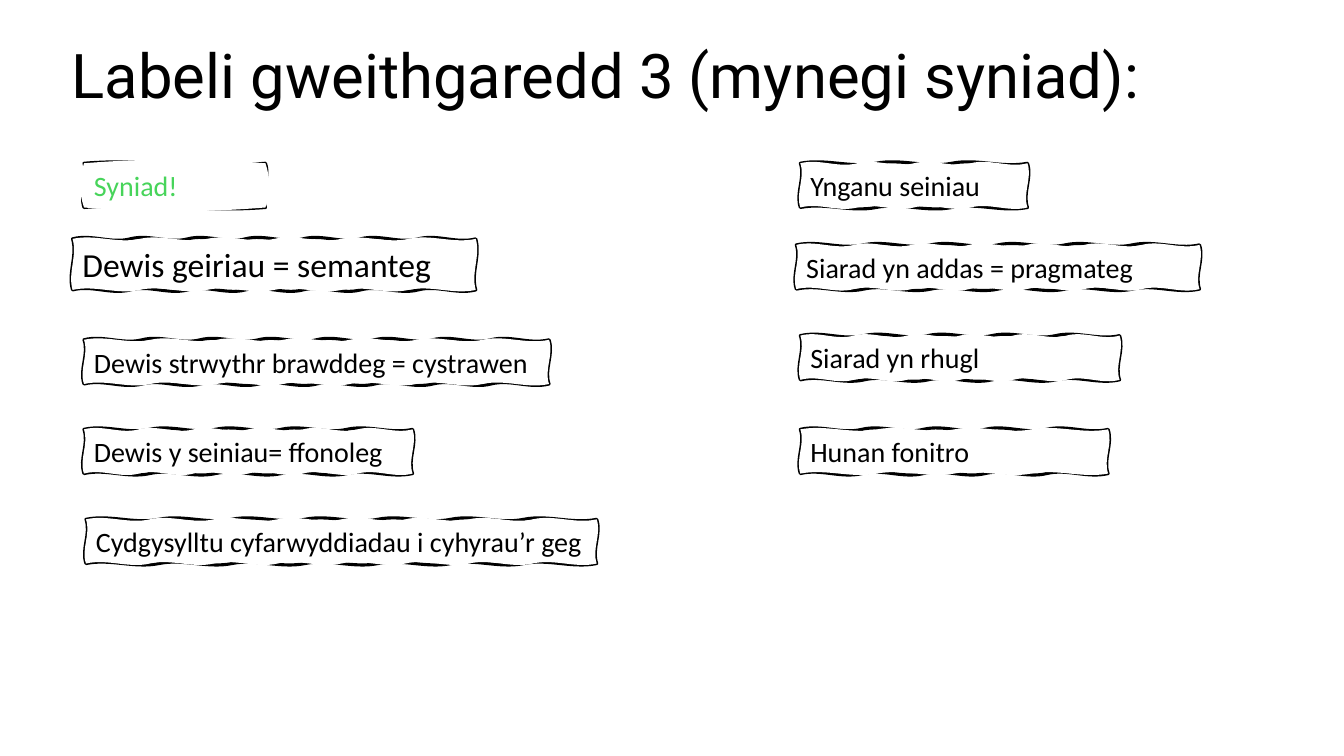
from copy import deepcopy
from dataclasses import dataclass
from math import hypot

from lxml.etree import SubElement
from pptx import Presentation
from pptx.dml.color import RGBColor as Color
from pptx.enum.text import MSO_ANCHOR as Anchor, PP_ALIGN as Align
from pptx.oxml.ns import qn
from pptx.util import Inches, Pt

SLIDE_WIDTH, SLIDE_HEIGHT = Inches(13.33), Inches(7.5)
SWAY = Inches(0.05)


@dataclass(frozen=True)
class Theme:
    ink: Color = Color(0x00, 0x00, 0x00)
    paper: Color = Color(0xFF, 0xFF, 0xFF)
    accent: Color = Color(0x47, 0xD4, 0x5A)
    title_font: str = "Roboto"
    label_font: str = "Calibri"
    title_size: int = 44
    label_size: int = 20
    large_size: int = 24
    line_width: float = 2.25


THEME = Theme()


@dataclass(frozen=True)
class Label:
    """A sketched label; lengths are percentages of the slide."""
    text: str
    left: float
    top: float
    width: float
    height: float = 5.85
    size: int = THEME.label_size
    color: Color = THEME.ink
    line_waves: int = 5
    mask_waves: int = 6
    bulging_mask: bool = False


LABELS = [
    # Left column
    Label("Syniad!", 6.25, 21.6, 13.5, color=THEME.accent,
          line_waves=1, mask_waves=1, bulging_mask=True),
    Label("Dewis geiriau = semanteg", 5.4, 31.6, 30, height=6.75,
          size=THEME.large_size, line_waves=7, mask_waves=6),
    Label("Dewis strwythr brawddeg = cystrawen", 6.25, 44.95, 34.6, line_waves=8, mask_waves=7),
    Label("Dewis y seiniau= ffonoleg", 6.25, 56.8, 24.45),
    Label("Cydgysylltu cyfarwyddiadau i cyhyrau’r geg", 6.4, 68.7, 38,
          line_waves=7, mask_waves=8),
    # Right column
    Label("Ynganu seiniau", 59.55, 21.6, 16.9, line_waves=3, mask_waves=4),
    Label("Siarad yn addas = pragmateg", 59.25, 32.4, 30, line_waves=6, mask_waves=7),
    Label("Siarad yn rhugl", 59.55, 44.4, 23.75),
    Label("Hunan fonitro", 59.55, 56.8, 22.9, line_waves=5, mask_waves=4),
]


def across(percent: float) -> int:
    return round(SLIDE_WIDTH * percent / 100)


def down(percent: float) -> int:
    return round(SLIDE_HEIGHT * percent / 100)


def write_text(shape, text: str, *, font: str, size: int, color: Color,
               line_spacing: float = 1.0) -> None:
    frame = shape.text_frame
    frame.word_wrap = True
    frame.vertical_anchor = Anchor.MIDDLE
    paragraph = frame.paragraphs[0]
    paragraph.alignment = Align.LEFT
    paragraph.line_spacing = line_spacing
    run = paragraph.add_run()
    run.text = text
    run.font.name, run.font.size = font, Pt(size)
    run.font.color.rgb = color


def outline_knots(label: Label, waves: int) -> list[tuple[int, int]]:
    """Wave ends, clockwise from the top left corner and back to it."""
    left, top = across(label.left), down(label.top)
    width, height = across(label.width), down(label.height)
    shares = [wave / waves for wave in range(waves + 1)]
    upper = [(left + round(width * share), top) for share in shares]
    lower = [(x, top + height) for x, _ in reversed(upper)]
    return upper + lower + upper[:1]


def bend_segments(contour, bulging: bool) -> None:
    """Turn straight segments into curves that sway out and then in, or only out."""
    turns = (1, 1) if bulging else (1, -1)
    start = None
    for segment in contour:
        point = segment.find(qn("a:pt"))
        if point is None:
            continue
        end = int(point.get("x")), int(point.get("y"))
        if segment.tag == qn("a:lnTo"):
            run, rise = end[0] - start[0], end[1] - start[1]
            length = hypot(run, rise)
            curve = SubElement(contour, qn("a:cubicBezTo"))
            for share, turn in zip((1 / 3, 2 / 3), turns):
                shift = SWAY * turn / length
                SubElement(curve, qn("a:pt"), x=str(round(start[0] + run * share + rise * shift)),
                           y=str(round(start[1] + rise * share - run * shift)))
            curve.append(point)
            contour.replace(segment, curve)
        start = end


def draw_label(slide, label: Label) -> None:
    line = outline_knots(label, label.line_waves)
    mask = outline_knots(label, label.mask_waves)
    builder = slide.shapes.build_freeform(*line[0])
    builder.add_line_segments(line[1:], close=True)
    builder.move_to(*mask[0])
    builder.add_line_segments(mask[1:], close=True)
    shape = builder.convert_to_shape()

    # First contour is only stroked; second is only filled, thinning the stroke
    stroke_contour = shape.element.find(f".//{qn('a:path')}")
    fill_contour = deepcopy(stroke_contour)
    split = len(line) + 1
    del stroke_contour[split:]
    del fill_contour[:split]
    stroke_contour.set("fill", "none")
    fill_contour.set("stroke", "0")
    stroke_contour.addnext(fill_contour)
    for contour, bulging in ((stroke_contour, False), (fill_contour, label.bulging_mask)):
        segments = list(contour)
        bend_segments(contour, bulging) if len(segments) > 2 else None

    shape.shadow.inherit = False
    shape.fill.solid()
    shape.fill.fore_color.rgb = THEME.paper
    shape.line.color.rgb = THEME.ink
    shape.line.width = Pt(THEME.line_width)
    write_text(shape, label.text, font=THEME.label_font, size=label.size, color=label.color)


def main() -> None:
    presentation = Presentation()
    presentation.slide_width, presentation.slide_height = SLIDE_WIDTH, SLIDE_HEIGHT
    slide = presentation.slides.add_slide(presentation.slide_layouts[6])

    # Labels
    for label in LABELS:
        draw_label(slide, label)

    # Title
    title = slide.shapes.add_textbox(across(4.6), down(0.7), across(86.25), down(19.3))
    write_text(title, "Labeli gweithgaredd 3 (mynegi syniad):", font=THEME.title_font,
               size=THEME.title_size, color=THEME.ink, line_spacing=0.9)

    presentation.save("out.pptx")


if __name__ == "__main__":
    main()
